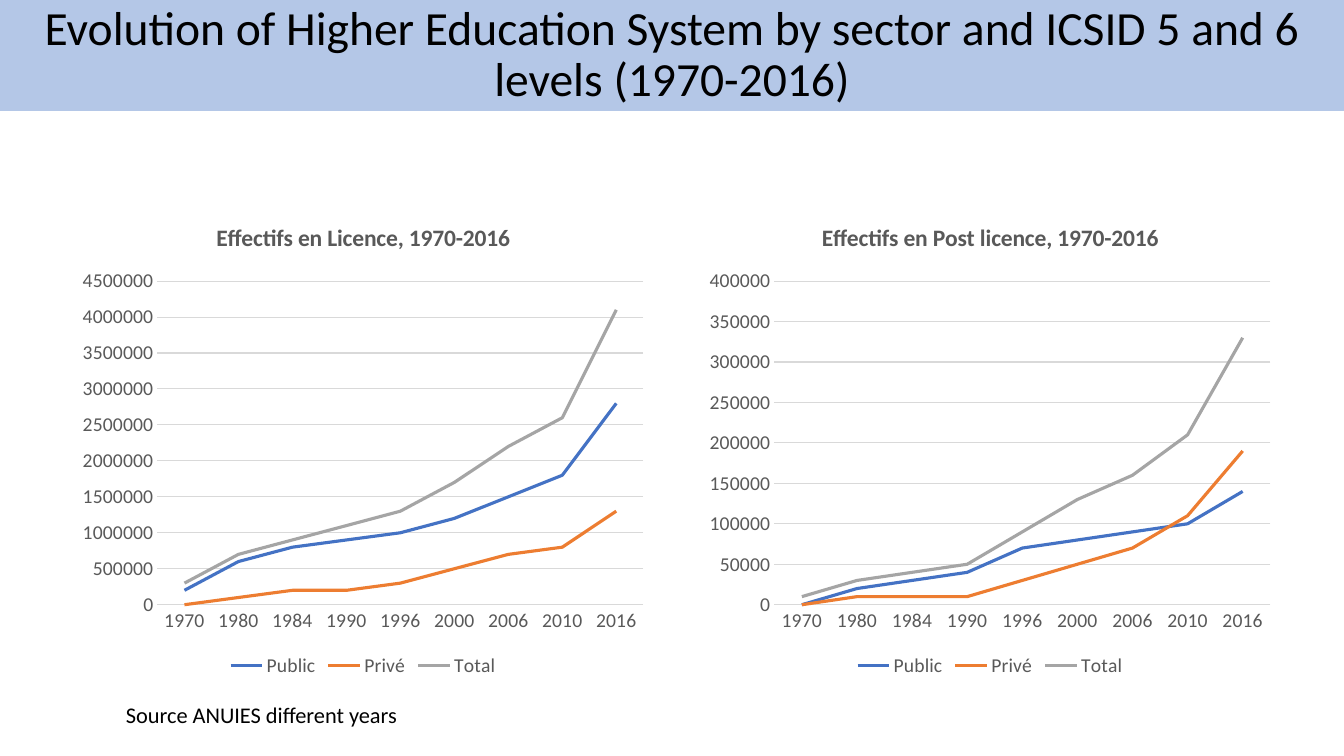
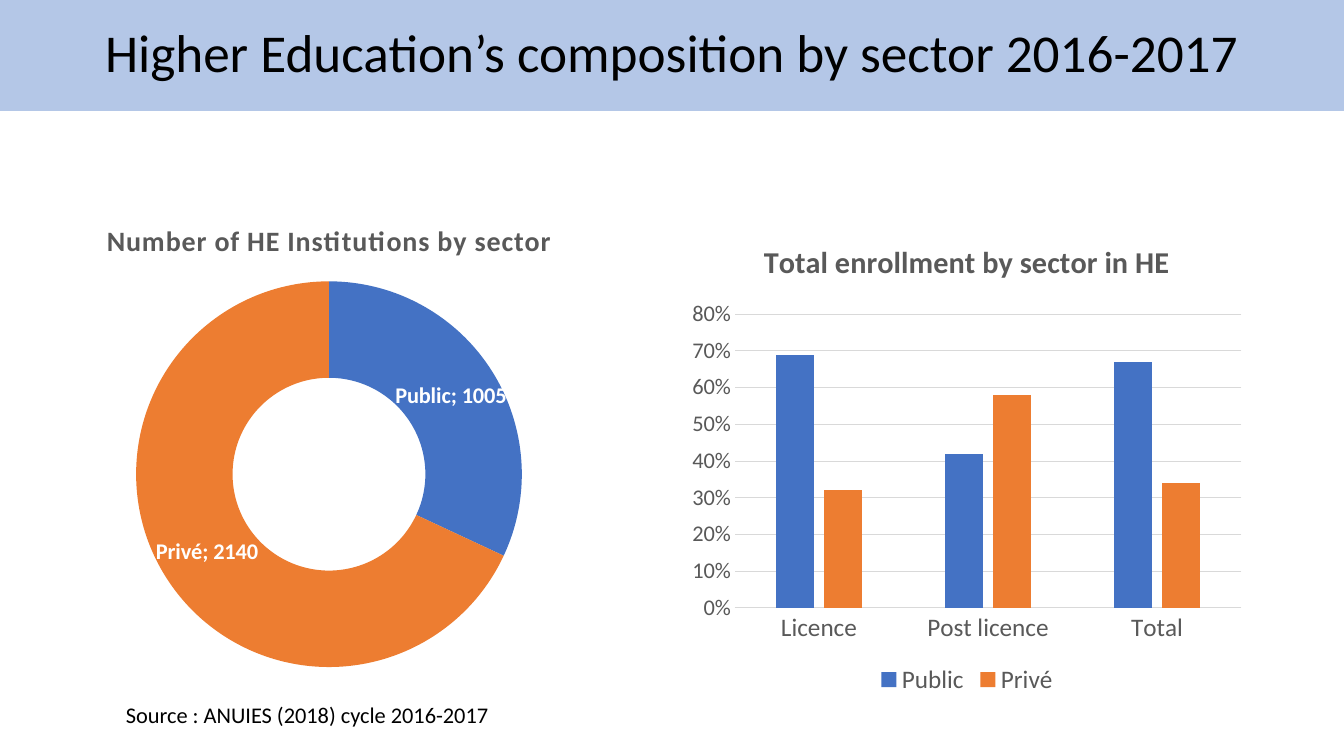
import dataclasses

import lxml.etree
import pptx
import pptx.chart.data
import pptx.dml.color
import pptx.enum.chart
import pptx.enum.shapes
import pptx.enum.text
import pptx.oxml.ns
import pptx.util

PX = 914400 / 100.8
WIDTH, HEIGHT = 1344, 756
XL = pptx.enum.chart.XL_CHART_TYPE
SECTORS = ("Public", "Privé", "Total")
YEARS = ("1970", "1980", "1984", "1990", "1996", "2000", "2006", "2010", "2016")


@dataclasses.dataclass(frozen=True)
class Theme:
    font: str = "Calibri"
    text: str = "000000"
    band: str = "B4C7E7"
    white: str = "FFFFFF"
    muted: str = "595959"
    grid: str = "D9D9D9"
    series: tuple = ("4472C4", "ED7D31", "A5A5A5")
    source_size: float = 16
    label_size: float = 16
    grid_width: float = 0.75
    series_width: float = 2.25


T = Theme()


def px(n):
    return pptx.util.Emu(round(n * PX))


def box(*lengths):
    return [px(n) for n in lengths]


def rgb(value):
    return pptx.dml.color.RGBColor.from_string(value)


def assign(obj, values):
    for name, value in values.items():
        setattr(obj, name, value)


def style_font(font, size, color=T.muted, bold=False):
    assign(font, {"name": T.font, "size": pptx.util.Pt(size), "bold": bold})
    font.color.rgb = rgb(color)


def fill(fmt, color):
    fmt.solid()
    fmt.fore_color.rgb = rgb(color)


def stroke(line, color, width):
    fill(line.fill, color)
    line.width = pptx.util.Pt(width)


def write(tf, text, size, values):
    assign(tf, {"word_wrap": True, **values})
    p = tf.paragraphs[0]
    r = p.add_run()
    r.text = text
    style_font(r.font, size, T.text)
    return p


def add_band(s, text, size):
    sp = s.shapes.add_shape(
        pptx.enum.shapes.MSO_SHAPE.RECTANGLE, *box(0, 0, WIDTH, 111))
    sp.shadow.inherit = False
    fill(sp.fill, T.band)
    sp.line.fill.background()
    p = write(sp.text_frame, text, size,
              {"vertical_anchor": pptx.enum.text.MSO_ANCHOR.MIDDLE})
    assign(p, {"alignment": pptx.enum.text.PP_ALIGN.CENTER, "line_spacing": 0.9})


def add_source(s, text):
    sp = s.shapes.add_textbox(*box(116, 696, 493, 37))
    write(sp.text_frame, text, T.source_size, {})


def add_chart(s, kind, area, title, title_size, cats, rows, spacing=0):
    data = pptx.chart.data.CategoryChartData()
    data.categories = cats
    for name, values in rows:
        data.add_series(name, values)
    chart = s.shapes.add_chart(kind, *box(*area), data).chart
    assign(chart, {"has_title": True, "has_legend": False})
    style_font(chart.font, 14)
    chart.chart_title.include_in_layout = False
    r = chart.chart_title.text_frame.paragraphs[0].add_run()
    r.text = title
    style_font(r.font, title_size, bold=True)
    if spacing:
        r.font._element.set("spc", str(spacing))
    chart.plots[0].vary_by_categories = False
    return chart


def style_axes(chart, cat_size, val_size, top, step, number_format):
    chart.has_legend = True
    assign(chart.legend, {
        "position": pptx.enum.chart.XL_LEGEND_POSITION.BOTTOM,
        "include_in_layout": False})
    style_font(chart.legend.font, cat_size)
    cat, val = chart.category_axis, chart.value_axis
    none = pptx.enum.chart.XL_TICK_MARK.NONE
    for axis, size in ((cat, cat_size), (val, val_size)):
        assign(axis, {"major_tick_mark": none, "minor_tick_mark": none})
        style_font(axis.tick_labels.font, size)
    stroke(cat.format.line, T.grid, T.grid_width)
    val.format.line.fill.background()
    assign(val, {"minimum_scale": 0, "maximum_scale": top, "major_unit": step,
                 "has_major_gridlines": True})
    stroke(val.major_gridlines.format.line, T.grid, T.grid_width)
    assign(val.tick_labels, {"number_format": number_format,
                             "number_format_is_linked": False})


def add_line_chart(s, area, title, rows, top, step):
    chart = add_chart(s, XL.LINE, area, title, 16.8, YEARS, zip(SECTORS, rows))
    style_axes(chart, 14, 14, top, step, "General")
    for series, color in zip(chart.series, T.series):
        series.smooth = False
        series.marker.style = pptx.enum.chart.XL_MARKER_STYLE.NONE
        stroke(series.format.line, color, T.series_width)


def add_column_chart(s, area, title, cats, rows):
    chart = add_chart(s, XL.COLUMN_CLUSTERED, area, title, 21.6, cats,
                      zip(SECTORS, rows))
    style_axes(chart, 18, 16, 0.8, 0.1, "0%")
    assign(chart.plots[0], {"gap_width": 219, "overlap": -27})
    for series, color in zip(chart.series, T.series):
        fill(series.format.fill, color)


def add_doughnut(s, area, title, values):
    chart = add_chart(s, XL.DOUGHNUT, area, title, 20, SECTORS[:2],
                      [("Institutions", values)], spacing=50)
    plot = chart.plots[0]
    plot.vary_by_categories = True
    for i, color in enumerate(T.series[:2]):
        fill(plot.series[0].points[i].format.fill, color)
    labels = plot.series[0].data_labels
    assign(labels, {"show_value": True, "show_category_name": True,
                    "show_percentage": False})
    style_font(labels.font, T.label_size, T.white, True)
    qn = pptx.oxml.ns.qn
    separator = lxml.etree.Element(qn("c:separator"))
    separator.text = "; "
    labels._element.find(qn("c:showBubbleSize")).addnext(separator)
    plot._element.find(qn("c:holeSize")).set("val", "50")


def add_slide(prs, title, size, source):
    s = prs.slides.add_slide(prs.slide_layouts[6])
    add_band(s, title, size)
    add_source(s, source)
    return s


def build_evolution(prs):
    s = add_slide(
        prs, "Evolution of Higher Education System by sector and ICSID 5 and 6 "
        "levels (1970-2016)", 34, "Source ANUIES different years")
    charts = (
        ("Effectifs en Licence, 1970-2016", 4500000, 500000, (
            (200000, 600000, 800000, 900000, 1000000,
             1200000, 1500000, 1800000, 2800000),
            (0, 100000, 200000, 200000, 300000,
             500000, 700000, 800000, 1300000),
            (300000, 700000, 900000, 1100000, 1300000,
             1700000, 2200000, 2600000, 4100000))),
        ("Effectifs en Post licence, 1970-2016", 400000, 50000, (
            (0, 20000, 30000, 40000, 70000, 80000, 90000, 100000, 140000),
            (0, 10000, 10000, 10000, 30000, 50000, 70000, 110000, 190000),
            (10000, 30000, 40000, 50000, 90000,
             130000, 160000, 210000, 330000))),
    )
    for i, (title, top, step, rows) in enumerate(charts):
        add_line_chart(s, (71 + i * 627, 202, 584, 480), title, rows, top, step)


def build_composition(prs):
    s = add_slide(prs, "Higher Education’s composition by sector 2016-2017", 38,
                  "Source : ANUIES (2018) cycle 2016-2017")
    add_doughnut(s, (43, 201, 572, 480), "Number of HE Institutions by sector",
                 (1005, 2140))
    add_column_chart(s, (681, 220, 572, 480), "Total enrollment by sector in HE",
                     ("Licence", "Post licence", "Total"),
                     ((0.69, 0.42, 0.67), (0.32, 0.58, 0.34)))


def main():
    prs = pptx.Presentation()
    assign(prs, {"slide_width": px(WIDTH), "slide_height": px(HEIGHT)})
    build_evolution(prs)
    build_composition(prs)
    prs.save("out.pptx")


if __name__ == "__main__":
    main()
